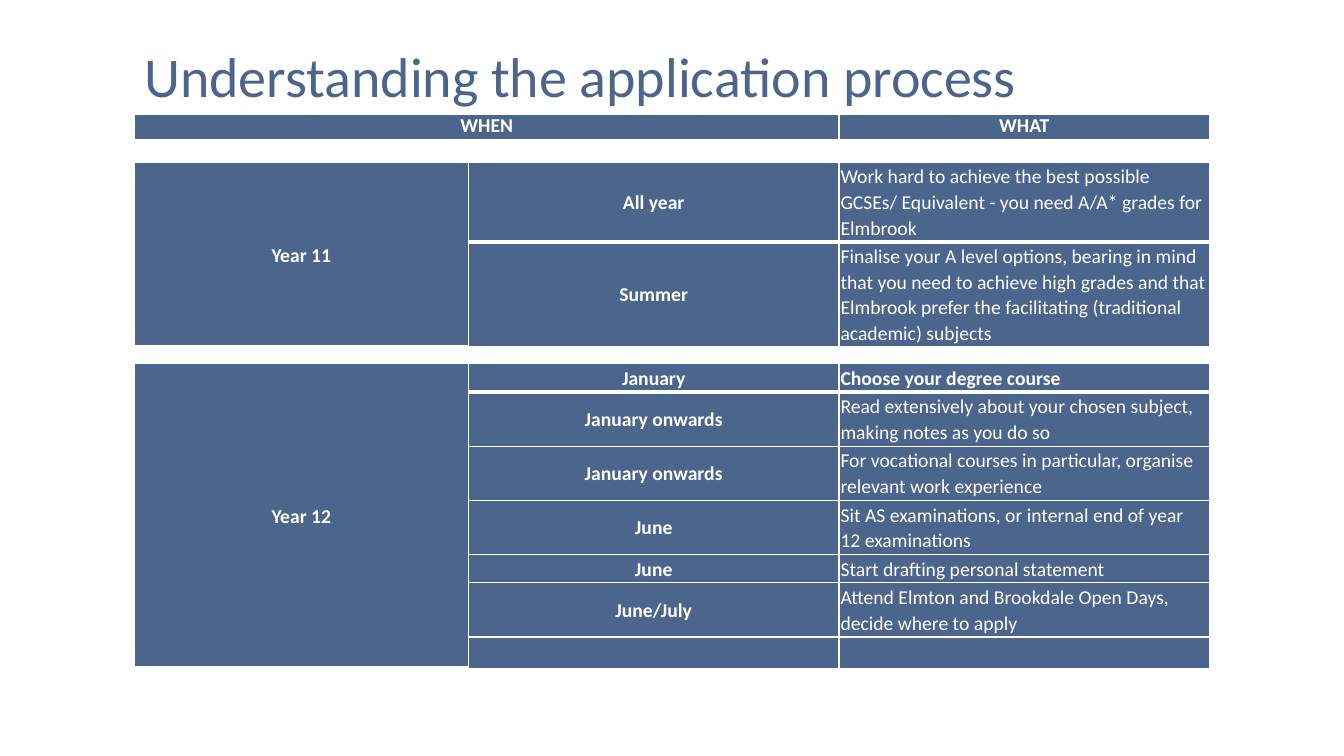
from pptx import Presentation
from pptx.dml.color import RGBColor
from pptx.enum import text as t
from pptx.oxml import parse_xml
from pptx.oxml.ns import nsdecls
from pptx.util import Pt

# Content
TITLE = "Understanding the application process"
HEAD = ("WHEN", "WHAT")
YEARS = [
    ("Year 11", 115.8, [
        ("All year", "Work hard to achieve the best possible GCSEs/ Equivalent"
         " - you need A/A* grades for Elmbrook", 3),
        ("Summer", "Finalise your A level options, bearing in mind that you"
         " need to achieve high grades and that Elmbrook prefer the"
         " facilitating (traditional academic) subjects", 4),
    ]),
    ("Year 12", 259.6, [
        ("January", "Choose your degree course", 1),
        ("January onwards", "Read extensively about your chosen subject,"
         " making notes as you do so", 2),
        ("January onwards", "For vocational courses in particular, organise"
         " relevant work experience", 2),
        ("June", "Sit AS examinations, or internal end of year 12"
         " examinations", 2),
        ("June", "Start drafting personal statement", 1),
        ("June/July", "Attend Elmton and Brookdale Open Days, decide where"
         " to apply", 2),
        ("", "", 1),
    ]),
]
KEY = "Choose your degree course"

# Look and layout, in points
BLUE, WHITE, FONT = "4B658D", "FFFFFF", "Calibri"
LEFT, WIDE = 96, 768
COLS = (238.6, 264.7, 264.7)
LINE, PAD = 18.3, 1.1


def color(code):
    return RGBColor.from_string(code)


def write(frame, words, size=14, ink=WHITE, bold=False, align=None,
          line=1.07, gap=None):
    para = frame.paragraphs[0]
    para.alignment = align
    para.line_spacing = line
    para.space_before = para.space_after = gap
    run = para.add_run()
    run.text = words
    font = run.font
    font.name, font.size, font.bold = FONT, Pt(size), bold
    font.color.rgb = color(ink)


def style(cell, row):
    """Fill, insets and white borders; the first row ends in a thick line."""
    cell.margin_left = cell.margin_right = Pt(PAD)
    cell.margin_top = cell.margin_bottom = Pt(PAD)
    cell.vertical_anchor = t.MSO_ANCHOR.MIDDLE
    cell.fill.solid()
    cell.fill.fore_color.rgb = color(BLUE)
    props = cell._tc.get_or_add_tcPr()
    for i, side in enumerate("LRTB"):
        width = Pt(3 if side == "B" and row == 0 else 1)
        props.insert(i, parse_xml(
            f'<a:ln{side} {nsdecls("a")} w="{width}"><a:solidFill>'
            f'<a:srgbClr val="{WHITE}"/></a:solidFill></a:ln{side}>'))


def grid(slide, top, cols, rows):
    shape = slide.shapes.add_table(len(rows), len(cols), Pt(LEFT), Pt(top),
                                   Pt(WIDE), Pt(sum(rows)))
    table = shape.table
    table.first_row = table.horz_banding = False
    for col, width in zip(table.columns, cols):
        col.width = Pt(width)
    for r, height in enumerate(rows):
        table.rows[r].height = Pt(height)
        for cell in table.rows[r].cells:
            style(cell, r)
    return table


def main():
    deck = Presentation()
    deck.slide_width, deck.slide_height = Pt(960), Pt(540)
    slide = deck.slides.add_slide(deck.slide_layouts[6])
    mid = t.PP_ALIGN.CENTER

    # Heading row
    head = grid(slide, 82, (COLS[0] + COLS[1], COLS[2]), [18.6])
    for cell, words in zip(head.rows[0].cells, HEAD):
        write(cell.text_frame, words, bold=True, align=mid,
              line=Pt(13.5), gap=Pt(2.2))

    # One table for each year
    for year, top, steps in YEARS:
        table = grid(slide, top, COLS, [n * LINE + PAD for _, _, n in steps])
        table.cell(0, 0).merge(table.cell(len(steps) - 1, 0))
        write(table.cell(0, 0).text_frame, year, bold=True, align=mid)
        for r, (when, what, _) in enumerate(steps):
            write(table.cell(r, 1).text_frame, when, bold=True, align=mid)
            write(table.cell(r, 2).text_frame, what, bold=what == KEY)

    # Title
    box = slide.shapes.add_textbox(Pt(LEFT), Pt(26), Pt(WIDE), Pt(55.7))
    frame = box.text_frame
    frame.word_wrap = True
    frame.auto_size = t.MSO_AUTO_SIZE.SHAPE_TO_FIT_TEXT
    write(frame, TITLE, size=40, ink=BLUE, line=1.0)

    deck.save("out.pptx")


if __name__ == "__main__":
    main()
